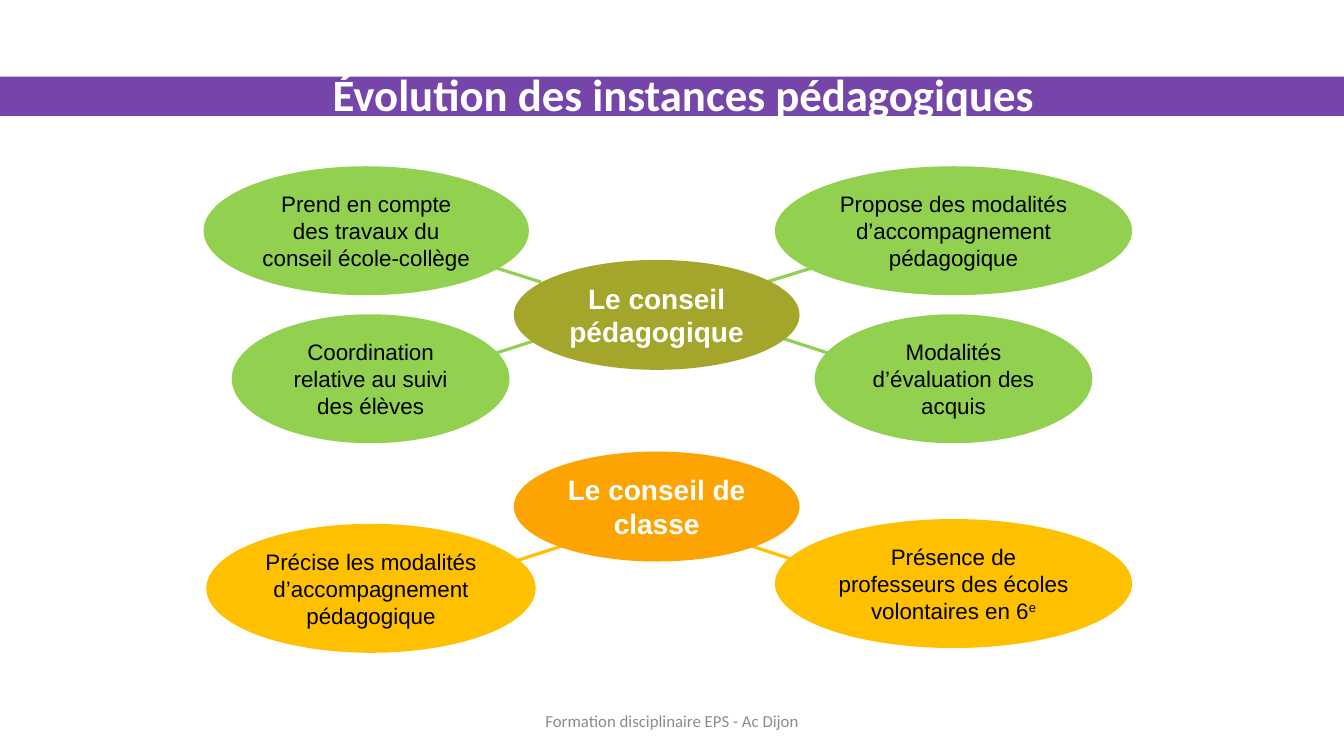
from pptx import Presentation
from pptx import util as u
from pptx.dml.color import RGBColor
from pptx.enum import shapes, text
from pptx.oxml.ns import qn
from lxml import etree

GREEN, AMBER, WHITE, BLACK = "92D050", "FFC000", "FFFFFF", "000000"


def paint(fmt, color):
    """Give a fill one solid colour."""
    fmt.solid()
    fmt.fore_color.rgb = RGBColor.from_string(color)


def write(shape, words, size=16, font="Arial", color=BLACK, bold=False,
          align=text.PP_ALIGN.CENTER, sup=""):
    """Fill a shape with one paragraph; sup is a raised ending."""
    frame = shape.text_frame
    frame.word_wrap = True
    frame.auto_size = text.MSO_AUTO_SIZE.NONE
    frame.vertical_anchor = text.MSO_ANCHOR.MIDDLE
    para = frame.paragraphs[0]
    para.alignment = align
    for part in filter(None, (words, sup)):
        run = para.add_run()
        run.text = part
        run.font.size, run.font.name, run.font.bold = u.Pt(size), font, bold
        paint(run.font.fill, color)
    if sup:
        run._r.get_or_add_rPr().set("baseline", "30000")


deck = Presentation()
deck.slide_width, deck.slide_height = u.Cm(33.87), u.Cm(19.05)
slide = deck.slides.add_slide(deck.slide_layouts[5])
pool = slide.shapes

# Title on its band
band = pool.add_shape(shapes.MSO_SHAPE.RECTANGLE, 0, u.Cm(1.93), deck.slide_width, u.Cm(0.99))
band.shadow.inherit = False
paint(band.fill, "7545A9")
band.line.fill.background()

title = pool.title
title.left, title.top, title.width, title.height = map(u.Cm, (8.13, 0.76, 24.05, 3.18))
write(title, "Évolution des instances pédagogiques", size=32, font="Calibri",
      color=WHITE, bold=True, align=text.PP_ALIGN.LEFT)
pool._spTree.append(title._element)

# Spokes between hubs and ideas
spokes = [
    (20.14, 14.15, 18.87, 13.74, AMBER),
    (12.95, 14.15, 14.22, 13.74, AMBER),
    (13.64, 7.11, 12.37, 6.71, GREEN),
    (12.37, 8.94, 13.64, 8.53, GREEN),
    (19.3, 7.11, 20.6, 6.71, GREEN),
    (21, 8.94, 19.74, 8.53, GREEN),
]
for *ends, color in spokes:
    spoke = pool.add_connector(shapes.MSO_CONNECTOR.STRAIGHT, *map(u.Cm, ends))
    paint(spoke.line.fill, color)
    spoke.line.width = u.Pt(2.25)
    etree.SubElement(spoke._element.spPr, qn("a:effectLst"))

# Ovals: left, top, width, height, fill, words, format
hub = dict(size=20, color=WHITE, bold=True)
ovals = [
    (12.95, 6.55, 7.2, 2.77, "A3A62A", "Le conseil pédagogique", hub),
    (19.53, 4.19, 9, 3.25, GREEN, "Propose des modalités d’accompagnement pédagogique", {}),
    (5.84, 7.92, 7, 3.25, GREEN, "Coordination relative au suivi des élèves", {}),
    (5.13, 4.19, 8.2, 3.25, GREEN, "Prend en compte des travaux du conseil école-collège", {}),
    (20.53, 7.92, 7, 3.25, GREEN, "Modalités d’évaluation des acquis", {}),
    (12.95, 11.38, 7.2, 2.77, "FDA403", "Le conseil de classe", hub),
    (19.53, 13.08, 9, 3.25, AMBER, "Présence de professeurs des écoles volontaires en 6",
     dict(sup="e")),
    (5.2, 13.2, 8.3, 3.25, AMBER, "Précise les modalités d’accompagnement pédagogique", {}),
]
for *box, color, words, style in ovals:
    oval = pool.add_shape(shapes.MSO_SHAPE.OVAL, *map(u.Cm, box))
    oval.shadow.inherit = False
    paint(oval.fill, color)
    oval.line.fill.background()
    if style is hub:
        frame = oval.text_frame
        frame.margin_left = frame.margin_right = u.Cm(0.2)
    write(oval, words, **style)

foot = pool.add_textbox(*map(u.Cm, (11.58, 17.65, 10.72, 1.02)))
write(foot, "Formation disciplinaire EPS - Ac Dijon", size=12, font="Calibri", color="8C8C8C")

deck.save("out.pptx")
